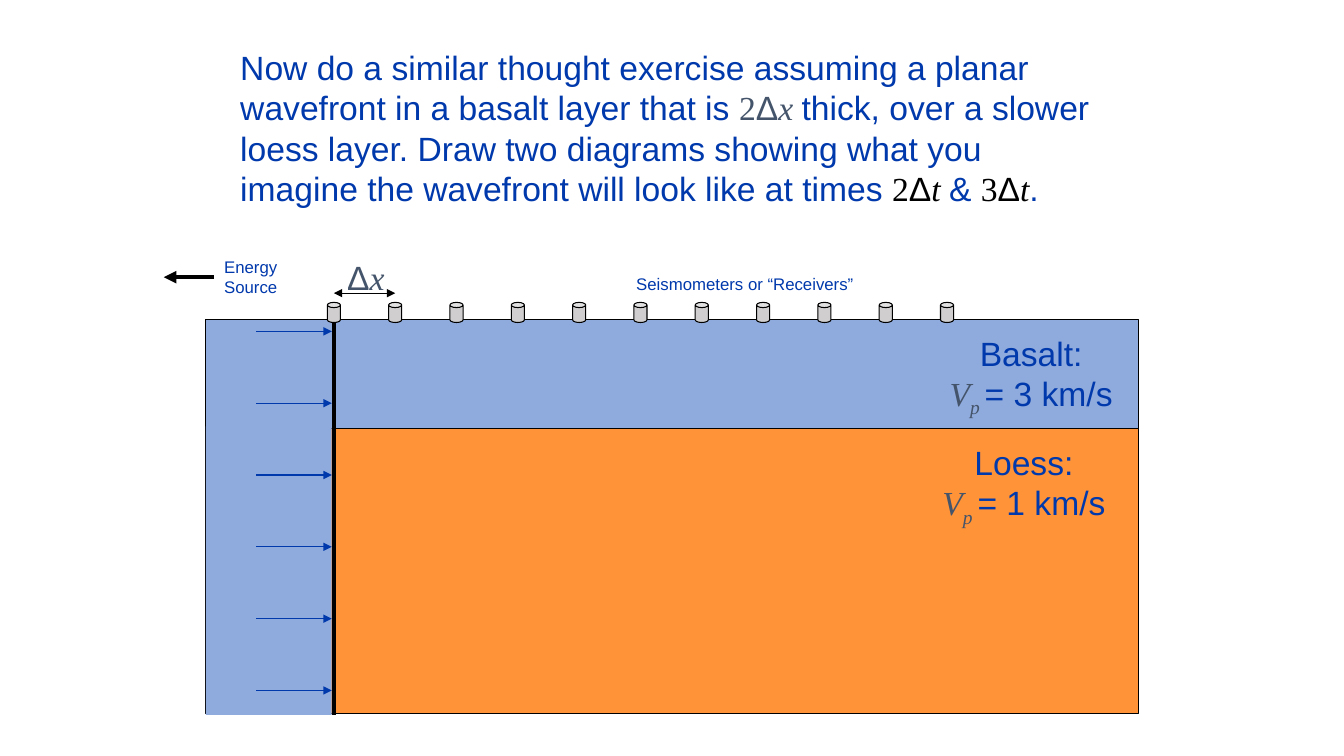
import pptx
import pptx.util
import pptx.dml.color
import pptx.enum.shapes
import pptx.enum.text
import pptx.oxml
import pptx.oxml.ns

COLS, ROWS = 160, 90
BLUE, SLATE, BLACK = "0039AC", "44546A", "000000"
BASALT, LOESS, STEEL = "8FAADC", "FF9338", "D0CECE"
SANS, SERIF = "Arial", "Times New Roman"
SHAPE = pptx.enum.shapes.MSO_SHAPE
LEFT = pptx.enum.text.PP_ALIGN.LEFT
CENTER = pptx.enum.text.PP_ALIGN.CENTER

prs = pptx.Presentation()
prs.slide_width = pptx.util.Inches(13.33)
prs.slide_height = pptx.util.Inches(7.5)


def grid(x, y):
    """Turn columns and rows of the slide grid into lengths."""
    return round(x * prs.slide_width / COLS), round(y * prs.slide_height / ROWS)


def rgb(color):
    return pptx.dml.color.RGBColor.from_string(color)


def add_shape(s, kind, x, y, w, h, fill, outlined=True):
    sp = s.shapes.add_shape(kind, *grid(x, y), *grid(w, h))
    sp.shadow.inherit = False
    sp.fill.solid()
    sp.fill.fore_color.rgb = rgb(fill)
    if outlined:
        sp.line.color.rgb = rgb(BLACK)
        sp.line.width = pptx.util.Pt(0.75)
    else:
        sp.line.fill.background()
    return sp


def add_line(s, x1, y1, x2, y2, color=BLACK, width=0.75, ends=()):
    """Draw a straight line; ends lists headEnd and tailEnd for arrowheads."""
    line = s.shapes.add_connector(pptx.enum.shapes.MSO_CONNECTOR.STRAIGHT,
                                  *grid(x1, y1), *grid(x2, y2))
    line.line.color.rgb = rgb(color)
    line.line.width = pptx.util.Pt(width)
    ln = line.line._get_or_add_ln()
    for end in ends:
        head = pptx.oxml.parse_xml(
            f'<a:{end} {pptx.oxml.ns.nsdecls("a")} type="triangle"/>')
        ln.append(head)
    line._element.spPr.append(pptx.oxml.parse_xml(
        f'<a:effectLst {pptx.oxml.ns.nsdecls("a")}/>'))


def write(sp, lines, size, align=LEFT):
    """Fill a shape with lines of (text, font, color, italic, baseline) runs."""
    tf = sp.text_frame
    tf.word_wrap = False
    tf.auto_size = pptx.enum.text.MSO_AUTO_SIZE.NONE
    tf.vertical_anchor = pptx.enum.text.MSO_ANCHOR.TOP
    for i, runs in enumerate(lines):
        p = tf.add_paragraph() if i else tf.paragraphs[0]
        p.alignment = align
        for text, font, color, italic, baseline in runs:
            r = p.add_run()
            r.text = text
            r.font.name = font
            r.font.size = pptx.util.Pt(size)
            r.font.color.rgb = rgb(color)
            r.font.italic = italic
            if baseline:
                r._r.get_or_add_rPr().set("baseline", str(baseline * 1000))


def add_label(s, x, y, w, h, lines, size=12, align=LEFT):
    write(s.shapes.add_textbox(*grid(x, y), *grid(w, h)), lines, size, align)


def plain(text, color=BLUE):
    return text, SANS, color, False, 0


def number(text, color):
    return text, SERIF, color, False, 0


def variable(text, color=SLATE, baseline=0):
    return text, SERIF, color, True, baseline


def delta(name, color):
    return [plain("Δ", color), variable(name, color)]


def add_question(s, x, y, w, h):
    title = s.shapes.title
    title.left, title.top = grid(x, y)
    title.width, title.height = grid(w, h)
    write(title, [
        [plain("Now do a similar thought exercise assuming a planar")],
        [plain("wavefront in a basalt layer that is "), number("2", SLATE),
         *delta("x ", SLATE), plain("thick, over a slower")],
        [plain("loess layer. Draw two diagrams showing what you")],
        [plain("imagine the wavefront will look like at times "),
         number("2", BLACK), *delta("t ", BLACK), plain("& "),
         number("3", BLACK), *delta("t", BLACK), plain(".")],
    ], 24)


def add_layer(s, x, y, w, h, fill, name, speed, label_x):
    add_shape(s, SHAPE.RECTANGLE, x, y, w, h, fill)
    add_label(s, label_x, y + 1, 23, 10.9, [
        [plain(f"{name}:")],
        [variable("V"), variable("p ", baseline=-25), plain(f"= {speed} km/s")],
    ], 24, CENTER)


def add_ground(s, x, y, w, basalt, loess, front):
    """Draw both layers and the wavefront, front columns from the left edge."""
    add_layer(s, x, y, w, basalt, BASALT, "Basalt", 3, x + 86.75)
    add_layer(s, x, y + basalt, w, loess, LOESS, "Loess", 1, x + 85.9)
    add_shape(s, SHAPE.RECTANGLE, x, y + basalt - 0.25, front - 0.25,
              loess + 0.35, BASALT, outlined=False)
    add_line(s, x + front, y + 0.4, x + front, y + basalt + loess + 0.1, width=3)
    for i in range(6):
        row = y + 1.45 + 8.55 * i
        add_line(s, x + 6, row, x + front - 0.25, row, BLUE, ends=["tailEnd"])


def add_receivers(s, x, y, step):
    """Set receivers on the surface y, step columns apart from x on."""
    for i in range(11):
        can = add_shape(s, SHAPE.CAN, x + step * i - 0.78, y - 2, 1.56, 2.4, STEEL)
        can.adjustments[0] = 0.4
    add_line(s, x, y - 3.1, x + step, y - 3.1, ends=["headEnd", "tailEnd"])
    add_label(s, x + 0.4, y - 8, 7.7, 6, [delta("x", SLATE)], 24)
    add_label(s, x + 34.8, y - 6, 29.2, 3.6,
              [[plain("Seismometers or “Receivers”")]])


def add_source(s, x, y):
    add_label(s, x, y, 8.75, 6, [[plain("Energy")], [plain("Source")]])
    add_line(s, x, y + 3, x - 6, y + 3, width=3, ends=["tailEnd"])


def main():
    s = prs.slides.add_slide(prs.slide_layouts[5])
    left, surface, front = 24.5, 38, 15.25
    add_question(s, 27.4, 5, 104.5, 20.6)
    add_ground(s, left, surface, 111, 13, 34, front)
    add_receivers(s, left + front, surface, 7.3)
    add_source(s, left + 1, surface - 8)
    prs.save("out.pptx")


if __name__ == "__main__":
    main()
